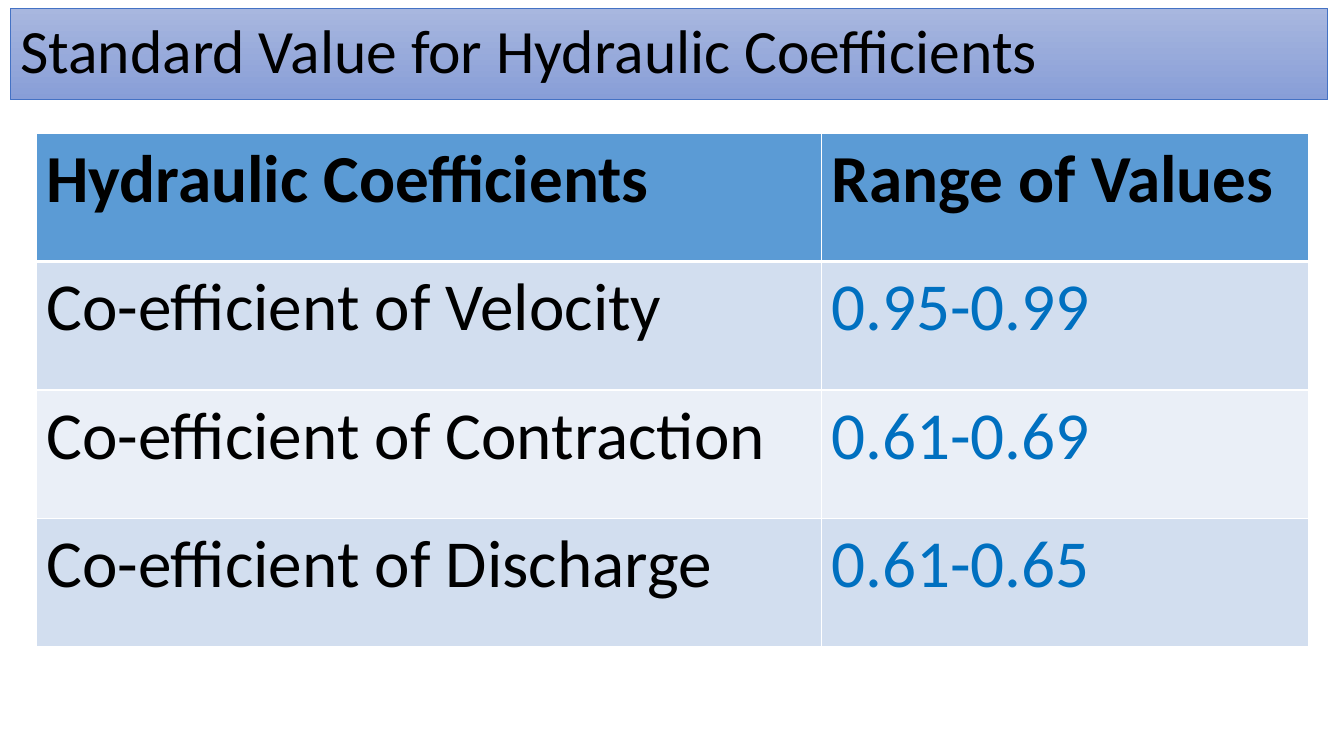
from lxml.etree import SubElement
from pptx import Presentation
from pptx.dml.color import RGBColor
from pptx.enum.text import MSO_ANCHOR, MSO_AUTO_SIZE, PP_ALIGN
from pptx.oxml.ns import qn
from pptx.util import Inches, Pt

FONT = "Calibri"
BLACK, WHITE, VALUE_BLUE = "000000", "FFFFFF", "0070C0"
HEADER_FILL, BAND_FILLS = "5B9BD5", ("D2DEEF", "EAEFF7")
COLUMN_SHARES = (0.617, 0.383)
COEFFICIENTS = [
    ("Hydraulic Coefficients", "Range of Values"),
    ("Co-efficient of Velocity", "0.95-0.99"),
    ("Co-efficient of Contraction", "0.61-0.69"),
    ("Co-efficient of Discharge", "0.61-0.65"),
]


def color(hex_code):
    return RGBColor.from_string(hex_code)


def format_text(paragraph, size, hex_code, bold=False):
    paragraph.alignment = PP_ALIGN.LEFT
    for run in paragraph.runs:
        run.font.name = FONT
        run.font.size = Pt(size)
        run.font.bold = bold
        run.font.color.rgb = color(hex_code)


def set_borders(cell, **widths):
    """Draw white cell borders; lines must precede the fill in the cell XML."""
    properties = cell._tc.get_or_add_tcPr()
    for side in ("L", "R", "T", "B"):
        line = SubElement(properties, qn(f"a:ln{side}"), w=str(Pt(widths.get(side, 1))))
        SubElement(SubElement(line, qn("a:solidFill")), qn("a:srgbClr"), val=WHITE)


def add_title_bar(slide, box):
    title = slide.shapes.title
    title.left, title.top, title.width, title.height = map(Inches, box)
    # Vertical gradient with a thin outline
    title.fill.gradient()
    title.fill.gradient_angle = 270
    for stop, shade in zip(title.fill.gradient_stops, ("A8B7DF", "889ED7")):
        stop.color.rgb = color(shade)
    title.line.color.rgb = color("4472C4")
    title.line.width = Pt(0.5)
    # Heading text
    frame = title.text_frame
    frame.text = "Standard Value for Hydraulic Coefficients"
    frame.word_wrap = True
    frame.auto_size = MSO_AUTO_SIZE.NONE
    frame.vertical_anchor = MSO_ANCHOR.MIDDLE
    frame.paragraphs[0].line_spacing = 0.9
    format_text(frame.paragraphs[0], 44, BLACK)


def add_coefficient_table(slide, box):
    left, top, width, height = map(Inches, box)
    table = slide.shapes.add_table(
        len(COEFFICIENTS), len(COLUMN_SHARES), left, top, width, height).table
    for column, share in zip(table.columns, COLUMN_SHARES):
        column.width = int(width * share)
    for row_index, texts in enumerate(COEFFICIENTS):
        is_header = row_index == 0
        fill = HEADER_FILL if is_header else BAND_FILLS[(row_index - 1) % 2]
        for column_index, text in enumerate(texts):
            cell = table.cell(row_index, column_index)
            # Heavier rule between the header and the first band
            set_borders(cell, B=3 if is_header else 1, T=3 if row_index == 1 else 1)
            cell.fill.solid()
            cell.fill.fore_color.rgb = color(fill)
            cell.text_frame.text = text
            is_value = column_index == 1 and not is_header
            format_text(cell.text_frame.paragraphs[0], 48,
                        VALUE_BLUE if is_value else BLACK, bold=is_header)


def main():
    presentation = Presentation()
    presentation.slide_width, presentation.slide_height = Inches(13.33), Inches(7.5)
    slide = presentation.slides.add_slide(presentation.slide_layouts[5])
    add_title_bar(slide, (0.1, 0.08, 13.07, 0.91))
    add_coefficient_table(slide, (0.36, 1.32, 12.62, 5.1))
    presentation.save("out.pptx")


if __name__ == "__main__":
    main()
